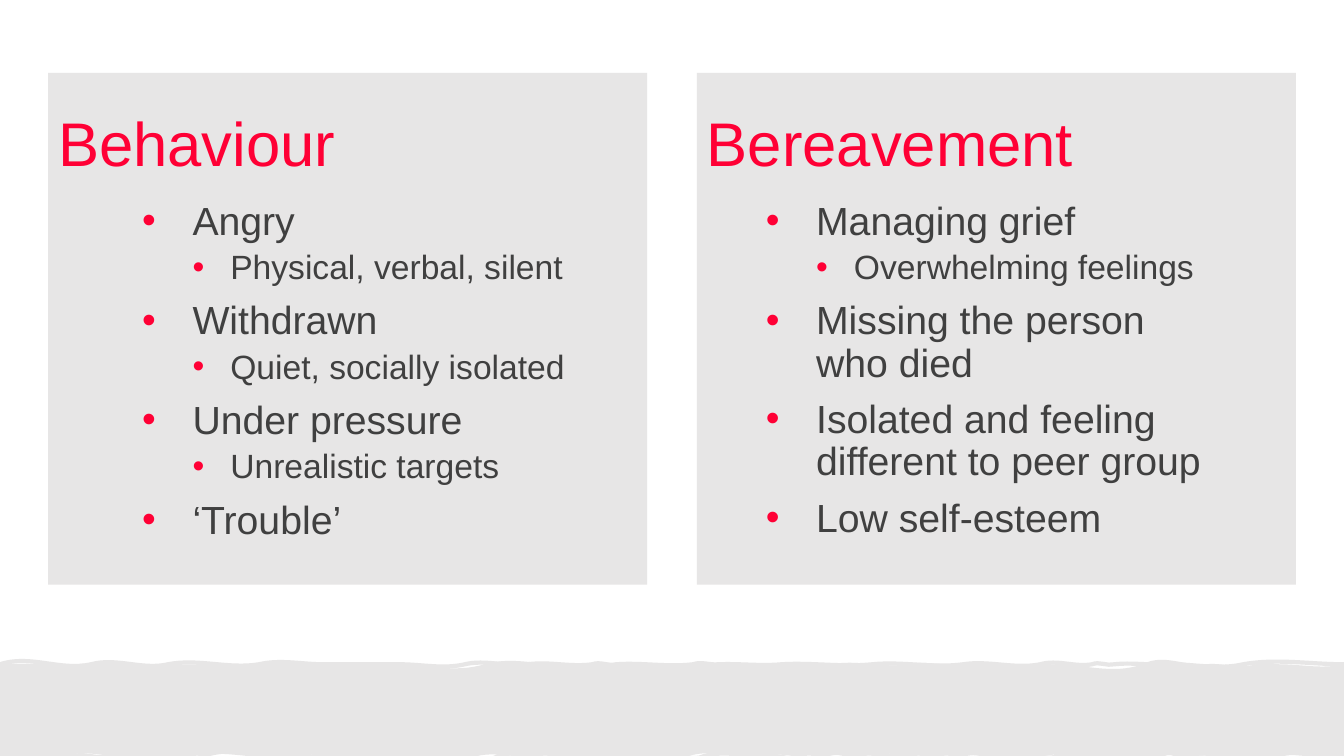
from lxml import etree
from pptx import Presentation
from pptx.dml.color import RGBColor
from pptx.enum.shapes import MSO_SHAPE
from pptx.enum.text import MSO_ANCHOR, MSO_AUTO_SIZE, PP_ALIGN
from pptx.oxml.ns import qn
from pptx.util import Pt

RECTANGLE = MSO_SHAPE.RECTANGLE
MIDDLE, TOP = MSO_ANCHOR.MIDDLE, MSO_ANCHOR.TOP
LEFT = PP_ALIGN.LEFT
NO_AUTOFIT = MSO_AUTO_SIZE.NONE

# Content: heading, list box (left, width), list items as (level, text)
COLUMNS = [
    {"heading": "Behaviour", "list_box": (94.3, 326.2), "items": [
        (0, "Angry"), (1, "Physical, verbal, silent"),
        (0, "Withdrawn"), (1, "Quiet, socially isolated"),
        (0, "Under pressure"), (1, "Unrealistic targets"),
        (0, "‘Trouble’")]},
    {"heading": "Bereavement", "list_box": (539.9, 337.7), "items": [
        (0, "Managing grief"), (1, "Overwhelming feelings"),
        (0, "Missing the person who died"),
        (0, "Isolated and feeling different to peer group"),
        (0, "Low self-esteem")]},
]

# Torn edges: (x, rise or dip of the curve as it arrives at x)
OUTLINE_TOP = [
    (0, 7.2), (65, 5), (120, 4.3), (185, 3.6), (231, 0), (286, 0), (332, 3.6),
    (377, 2.2), (423, 2.2), (440, 1.4), (495, 2.2), (513, 0.7), (558, 1.4),
    (623, 2.2), (688, 2.9), (743, 3.6), (780, 2.2), (796, 1.4), (832, 0.7),
    (888, 4.3), (960, 0)]
OUTLINE_BOTTOM = [
    (960, -6.5), (895, -0.7), (840, -4.3), (823, -2.2), (758, -2.9),
    (722, -0.7), (667, -6.5), (649, -0.7), (585, -6.5), (549, -0.7),
    (503, -4.3), (477, -2.2), (421, -1.4), (356, -6.5), (320, -3.6),
    (255, -3.6), (210, -0.7), (145, -7.9), (79, -2.9), (53, -2.2), (0, -4.3)]
FILL_TOP = [
    (0, 0.7), (36, 0), (53, 1.4), (118, 0), (154, 0.7), (190, 1.4), (255, 2.9),
    (282, 0), (346, 6.5), (411, 2.2), (457, 2.2), (522, 2.2), (558, 2.9),
    (594, 3.6), (649, 2.9), (685, 1.4), (751, 0.7), (816, 7.9), (861, 1.4),
    (897, 3.6), (914, 0), (960, 3.6)]
FILL_BOTTOM = [
    (960, -2.2), (934, 0), (917, -1.4), (900, -0.7), (854, -1.4), (827, -2.2),
    (772, -2.2), (746, -2.9), (690, -2.9), (673, -1.4), (618, -4.3),
    (592, -2.9), (575, -1.4), (548, -2.9), (492, -5.8), (467, -1.4),
    (449, -0.7), (423, 0), (387, -2.9), (341, -3.6), (315, -0.7), (250, -2.2),
    (204, -3.6), (139, -5), (84, 0), (48, -4.3), (0, -3.6)]
STRIP_PATHS = [  # top edge, bottom edge, what the path leaves out
    (OUTLINE_TOP, OUTLINE_BOTTOM, ("fill", "none")),
    (FILL_TOP, FILL_BOTTOM, ("stroke", "0")),
]

# Layout and formats
SLIDE_WIDTH, SLIDE_HEIGHT = 960, 540
PANEL_LEFT, PANEL_TOP, PANEL_WIDTH, PANEL_HEIGHT = 34.3, 52, 427.9, 365.7
COLUMN_STEP = 463.5
HEADING_TOP, HEADING_WIDTH, HEADING_HEIGHT = 52.6, 344.2, 104.4
LIST_TOP, LIST_HEIGHT = 140.2, 277.2
STRIP_TOP = 474.5
STRIP_HEIGHT = SLIDE_HEIGHT - STRIP_TOP
GREY, RED, DARK = "E7E6E6", "FF0035", "404040"
HEADING_FONT = {"name": "Arial", "size": Pt(44), "bold": False}
LEVELS = [
    {"font": {"name": "Arial", "size": Pt(28)}, "margin": 36, "hang": 36, "before": 10},
    {"font": {"name": "Arial", "size": Pt(24)}, "margin": 63, "hang": 27, "before": 5},
]


def colour(hex_value):
    return RGBColor.from_string(hex_value)


def place(shape, left, top, width, height):
    box = {"left": left, "top": top, "width": width, "height": height}
    for name, value in box.items():
        setattr(shape, name, Pt(value))


def fill_grey(shape):
    shape.shadow.inherit = False
    shape.fill.solid()
    shape.fill.fore_color.rgb = colour(GREY)


def set_frame(frame, anchor):
    settings = {"word_wrap": True, "auto_size": NO_AUTOFIT, "vertical_anchor": anchor}
    for name, value in settings.items():
        setattr(frame, name, value)


def write(paragraph, text, font, hex_value):
    paragraph.alignment = LEFT
    paragraph.line_spacing = 0.9
    run = paragraph.add_run()
    run.text = text
    for name, value in font.items():
        setattr(run.font, name, value)
    run.font.color.rgb = colour(hex_value)


def add_bullet(paragraph, margin, hang):
    properties = paragraph._p.get_or_add_pPr()
    properties.set("marL", str(Pt(margin)))
    properties.set("indent", str(-Pt(hang)))
    bullet_colour = etree.SubElement(properties, qn("a:buClr"))
    etree.SubElement(bullet_colour, qn("a:srgbClr"), val=RED)
    etree.SubElement(properties, qn("a:buFont"), typeface="Arial")
    etree.SubElement(properties, qn("a:buChar"), char="•")


def fill_heading(shape, text):
    set_frame(shape.text_frame, MIDDLE)
    write(shape.text_frame.paragraphs[0], text, HEADING_FONT, RED)


def fill_list(shape, items):
    frame = shape.text_frame
    set_frame(frame, TOP)
    for index, (level, text) in enumerate(items):
        style = LEVELS[level]
        paragraph = frame.add_paragraph() if index else frame.paragraphs[0]
        paragraph.level = level
        paragraph.space_before = Pt(style["before"] if index else 0)
        add_bullet(paragraph, style["margin"], style["hang"])
        write(paragraph, text, style["font"], DARK)


def add_step(outline, tag, *points):
    step = etree.SubElement(outline, qn(tag))
    for x, y in points:
        etree.SubElement(step, qn("a:pt"), x=str(Pt(x)), y=str(Pt(y)))


def add_torn_edge(outline, anchors, base):
    """Smooth waves that cross the base line at each anchor."""
    for (start, leaving), (end, arriving) in zip(anchors, anchors[1:]):
        third = (end - start) / 3
        add_step(outline, "a:cubicBezTo", (start + third, base - leaving),
                 (end - third, base + arriving), (end, base))


def add_strip(shapes):
    right, bottom = Pt(SLIDE_WIDTH), Pt(SLIDE_HEIGHT)
    builder = shapes.build_freeform(0, Pt(STRIP_TOP))
    builder.add_line_segments([(right, Pt(STRIP_TOP)), (right, bottom), (0, bottom)])
    strip = builder.convert_to_shape()
    outlines = strip._element.find(".//" + qn("a:pathLst"))
    outlines.remove(outlines[0])
    for top_edge, bottom_edge, (name, value) in STRIP_PATHS:
        outline = etree.SubElement(outlines, qn("a:path"), w=str(right),
                                   h=str(Pt(STRIP_HEIGHT)))
        outline.set(name, value)
        add_step(outline, "a:moveTo", (0, 0))
        add_torn_edge(outline, top_edge, 0)
        add_step(outline, "a:lnTo", (SLIDE_WIDTH, STRIP_HEIGHT))
        add_torn_edge(outline, bottom_edge, STRIP_HEIGHT)
        etree.SubElement(outline, qn("a:close"))
    fill_grey(strip)
    strip.line.color.rgb = colour(GREY)
    strip.line.width = Pt(3)


def main():
    presentation = Presentation()
    presentation.slide_width, presentation.slide_height = Pt(SLIDE_WIDTH), Pt(SLIDE_HEIGHT)
    slide = presentation.slides.add_slide(presentation.slide_layouts[1])
    shapes = slide.shapes
    placeholders = [shapes.title, slide.placeholders[1]]

    # Two panels, each with a heading and a list
    for index, column in enumerate(COLUMNS):
        left = PANEL_LEFT + index * COLUMN_STEP
        panel = shapes.add_shape(RECTANGLE, Pt(left), Pt(PANEL_TOP),
                                 Pt(PANEL_WIDTH), Pt(PANEL_HEIGHT))
        fill_grey(panel)
        panel.line.fill.background()
        if index == 0:
            heading, bullet_list = placeholders
            for shape in placeholders:
                panel._element.getparent().append(shape._element)
        else:
            heading, bullet_list = (shapes.add_textbox(0, 0, 0, 0) for _ in range(2))
        place(heading, left, HEADING_TOP, HEADING_WIDTH, HEADING_HEIGHT)
        fill_heading(heading, column["heading"])
        list_left, list_width = column["list_box"]
        place(bullet_list, list_left, LIST_TOP, list_width, LIST_HEIGHT)
        fill_list(bullet_list, column["items"])

    # Torn paper strip along the bottom
    add_strip(shapes)

    presentation.save("out.pptx")


if __name__ == "__main__":
    main()
